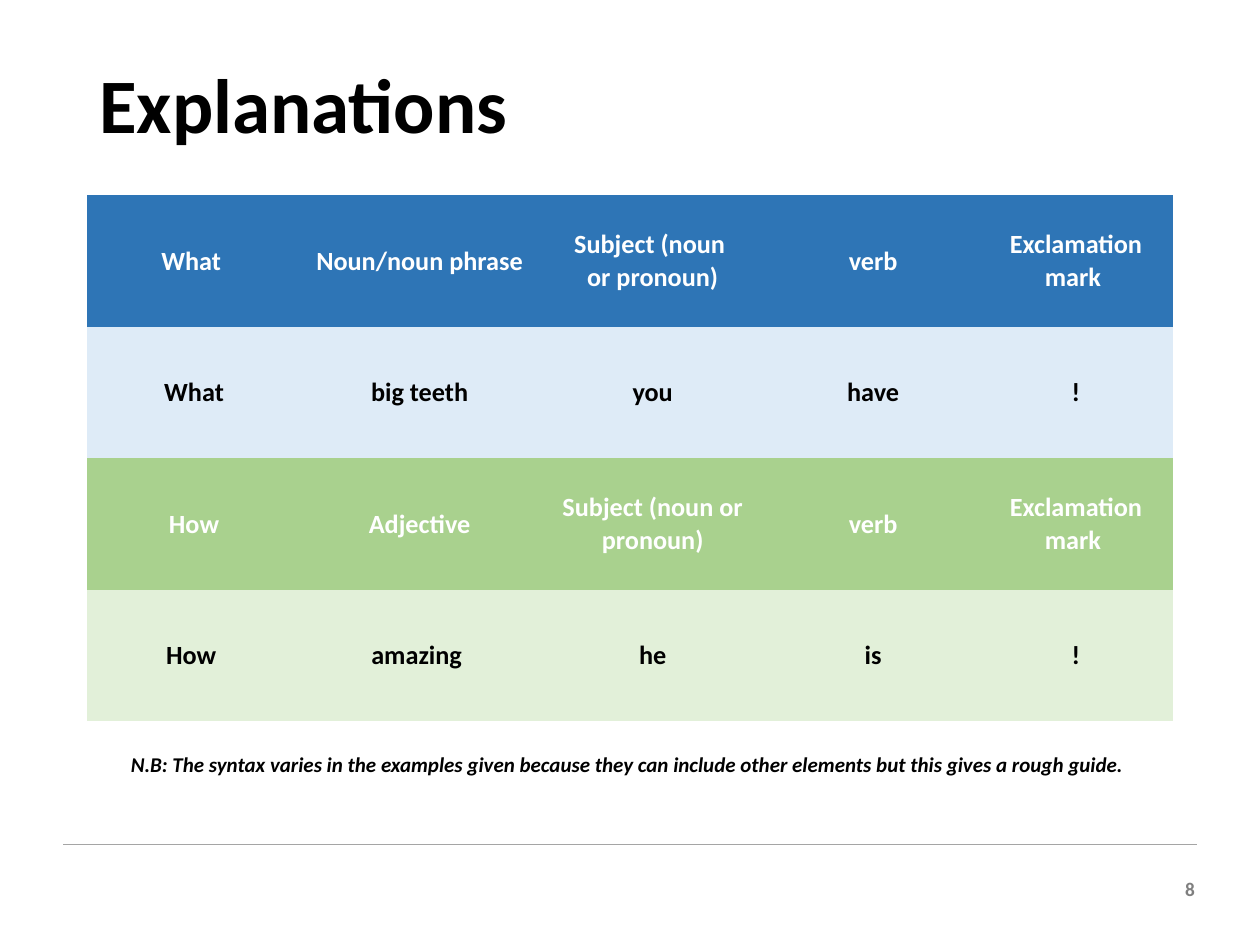
from dataclasses import dataclass

from pptx import Presentation
from pptx.dml.color import RGBColor
from pptx.enum import shapes, text
from pptx.oxml import ns
from pptx.util import Pt
from lxml import etree

FONT = "Calibri"
BLACK = RGBColor(0x00, 0x00, 0x00)
WHITE = RGBColor(0xFF, 0xFF, 0xFF)
GRAY = RGBColor(0x7F, 0x7F, 0x7F)
RULE = RGBColor(0xA5, 0xA5, 0xA5)
BLUE = RGBColor(0x2E, 0x75, 0xB6)
PALE_BLUE = RGBColor(0xDE, 0xEB, 0xF7)
GREEN = RGBColor(0xA9, 0xD1, 0x8E)
PALE_GREEN = RGBColor(0xE2, 0xF0, 0xD9)

PLAIN_STYLE = "{2D5ABB26-0587-4C30-8999-92F81FD0307C}"
LEFT, WIDTH = 49.7, 620.6
COLS = (122.4, 135.4, 131, 121, 110.8)
ROW, NOTE_ROW = 75.15, 50.4
NOTE = ("N.B: The syntax varies in the examples given because they can "
        "include other elements but this gives a rough guide. ")


@dataclass
class Band:
    words: tuple[str, ...]
    fill: RGBColor
    ink: RGBColor


BANDS = (
    Band(("What ", "Noun/noun phrase", "Subject (noun \vor pronoun)",
          "verb", "Exclamation mark "), BLUE, WHITE),
    Band(("What", "big teeth", "you", "have", "!"), PALE_BLUE, BLACK),
    Band(("How", "Adjective", "Subject (noun or pronoun)",
          "verb", "Exclamation mark "), GREEN, WHITE),
    Band(("How ", "amazing ", "he", "is", "!"), PALE_GREEN, BLACK),
)


def write(frame, words: str, size: float, ink: RGBColor,
          align: text.PP_ALIGN, italic: bool = False) -> None:
    frame.text = words
    frame.word_wrap = True
    para = frame.paragraphs[0]
    para.alignment = align
    for run in para.runs:
        font = run.font
        font.name, font.size = FONT, Pt(size)
        font.bold, font.italic = True, italic
        font.color.rgb = ink


def fill_cell(cell, words: str, size: float, ink: RGBColor,
              italic: bool = False) -> None:
    cell.margin_left = cell.margin_right = Pt(5)
    cell.margin_top = cell.margin_bottom = Pt(0)
    cell.vertical_anchor = text.MSO_ANCHOR.MIDDLE
    write(cell.text_frame, words, size, ink, text.PP_ALIGN.CENTER, italic)


def add_rule(slide) -> None:
    line = slide.shapes.add_connector(
        shapes.MSO_CONNECTOR.STRAIGHT, Pt(36), Pt(482.4), Pt(684), Pt(482.4))
    line.line.color.rgb = RULE
    line.line.width = Pt(0.75)
    etree.SubElement(line._element.spPr, ns.qn("a:effectLst"))


def add_grid(slide) -> None:
    """Draw the sentence patterns with the merged note row below."""
    last = len(BANDS)
    shape = slide.shapes.add_table(
        last + 1, len(COLS), Pt(LEFT), Pt(111.6), Pt(WIDTH),
        Pt(ROW * last + NOTE_ROW))
    table = shape.table
    table.first_row = table.horz_banding = False
    table._tbl.tblPr.find(ns.qn("a:tableStyleId")).text = PLAIN_STYLE
    for col, width in zip(table.columns, COLS):
        col.width = Pt(width)
    for r, band in enumerate(BANDS):
        table.rows[r].height = Pt(ROW)
        for c, words in enumerate(band.words):
            cell = table.cell(r, c)
            fill_cell(cell, words, 15, band.ink)
            cell.fill.solid()
            cell.fill.fore_color.rgb = band.fill
    table.rows[last].height = Pt(NOTE_ROW)
    note = table.cell(last, 0)
    note.merge(table.cell(last, len(COLS) - 1))
    fill_cell(note, NOTE, 12, BLACK, italic=True)
    note.fill.background()


def add_title(slide) -> None:
    box = slide.shapes.add_textbox(Pt(LEFT), Pt(22.3), Pt(WIDTH), Pt(79.2))
    frame = box.text_frame
    write(frame, "Explanations", 44, BLACK, text.PP_ALIGN.LEFT)
    frame.vertical_anchor = text.MSO_ANCHOR.MIDDLE
    frame.paragraphs[0].line_spacing = 0.9


def add_number(slide) -> None:
    box = slide.shapes.add_textbox(Pt(662.4), Pt(497.5), Pt(27.4), Pt(20.9))
    write(box.text_frame, "8", 11, GRAY, text.PP_ALIGN.RIGHT)


def main() -> None:
    deck = Presentation()
    deck.slide_width, deck.slide_height = Pt(720), Pt(540)
    slide = deck.slides.add_slide(deck.slide_layouts[6])
    add_rule(slide)
    add_number(slide)
    add_grid(slide)
    add_title(slide)
    deck.save("out.pptx")


if __name__ == "__main__":
    main()
